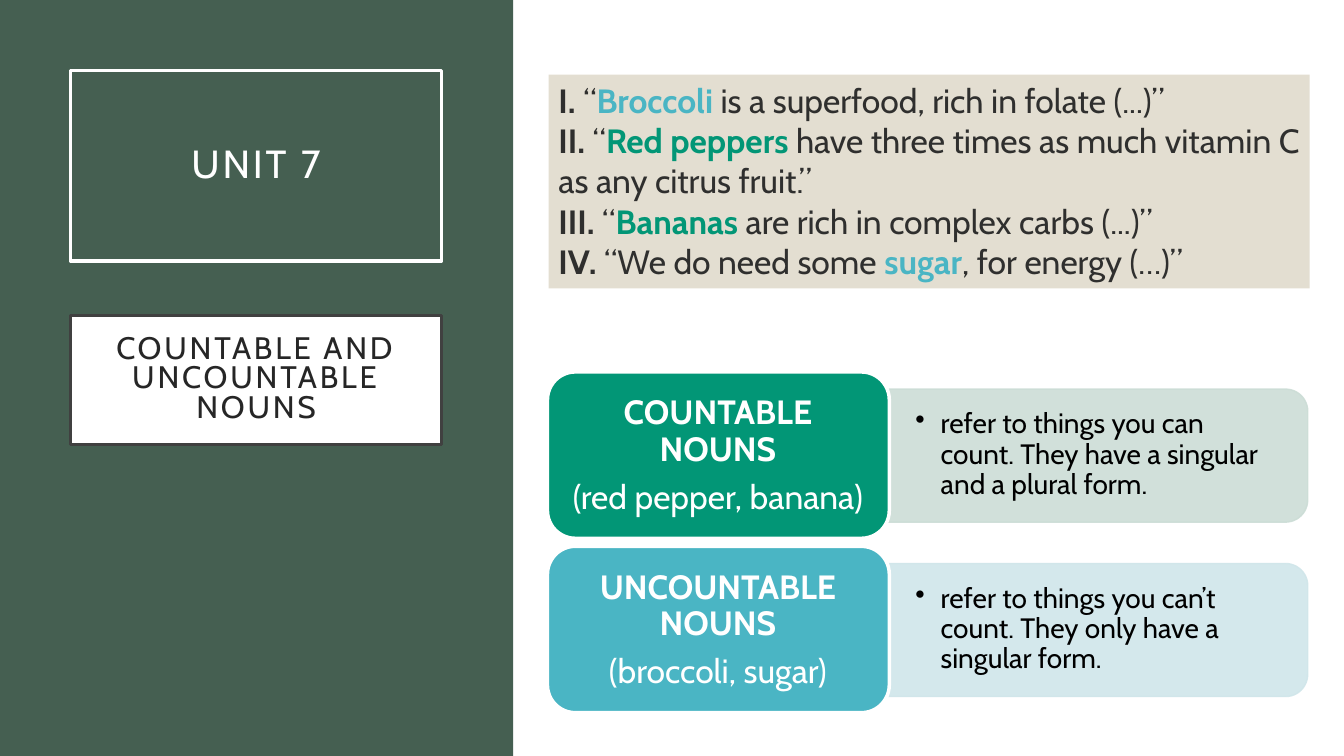
import pptx
import pptx.dml.color
import pptx.enum.shapes
import pptx.enum.text
import pptx.oxml.ns
import pptx.util
import lxml.etree

PX = 9144  # 100 px to the inch
WHITE, INK = "FFFFFF", "2F2F2E"
GREEN, BLUE = "029676", "4AB5C4"

rgb = pptx.dml.color.RGBColor.from_string
qn = pptx.oxml.ns.qn
SHAPE = pptx.enum.shapes.MSO_SHAPE
ALIGN = pptx.enum.text.PP_ALIGN
ANCHOR = pptx.enum.text.MSO_ANCHOR

deck = pptx.Presentation()
deck.slide_width, deck.slide_height = 1333 * PX, 750 * PX
slide = deck.slides.add_slide(deck.slide_layouts[6])


def block(preset, frame, fill=None, line=None, weight=2.5):
    shape = slide.shapes.add_shape(preset, *[n * PX for n in frame])
    shape.shadow.inherit = False
    if fill:
        shape.fill.solid()
        shape.fill.fore_color.rgb = rgb(fill)
    else:
        shape.fill.background()
    if line:
        shape.line.color.rgb = rgb(line)
        shape.line.width = pptx.util.Pt(weight)
    else:
        shape.line.fill.background()
    return shape


def write(shape, paragraphs, size, align=ALIGN.CENTER, anchor=ANCHOR.MIDDLE,
          inset=(10, 5), leading=1.0, after=0, tracking=0, bullet=False):
    """Each paragraph is a list of (text, colour, bold) runs."""
    frame = shape.text_frame
    frame.word_wrap = True
    frame.vertical_anchor = anchor
    frame.margin_left = frame.margin_right = inset[0] * PX
    frame.margin_top = frame.margin_bottom = inset[1] * PX
    for number, runs in enumerate(paragraphs):
        paragraph = frame.add_paragraph() if number else frame.paragraphs[0]
        paragraph.alignment = align
        paragraph.line_spacing = leading
        paragraph.space_after = pptx.util.Pt(after)
        if bullet:
            properties = paragraph._p.get_or_add_pPr()
            properties.set("marL", str(25 * PX))
            properties.set("indent", str(-25 * PX))
            lxml.etree.SubElement(properties, qn("a:buChar")).set("char", "•")
        for text, colour, bold in runs:
            run = paragraph.add_run()
            run.text = text
            run.font.name = "Cabin"
            run.font.size = pptx.util.Pt(size)
            run.font.bold = bold
            run.font.color.rgb = rgb(colour)
            if tracking:
                run._r.get_or_add_rPr().set("spc", str(tracking * 100))


# Side panel with unit and topic
block(SHAPE.RECTANGLE, (0, 0, 509, 750), "455F51")
unit = block(SHAPE.RECTANGLE, (70, 70, 368, 189), line=WHITE)
write(unit, [[("UNIT 7", WHITE, False)]], 28,
      inset=(20, 20), leading=0.9, tracking=2)
topic = block(SHAPE.RECTANGLE, (70, 313, 368, 128), WHITE, "404040")
write(topic, [[("COUNTABLE AND UNCOUNTABLE NOUNS", "262626", False)]], 22.2,
      inset=(20, 20), leading=0.8, tracking=2)

# Example sentences: numeral, opening, noun, noun colour, ending
sentences = [
    ("I. ", "“", "Broccoli", BLUE, " is a superfood, rich in folate (...)”"),
    ("II. ", "“", "Red peppers ", GREEN,
     "have three times as much vitamin C as any citrus fruit.”"),
    ("III. ", "“", "Bananas", GREEN, " are rich in complex carbs (...)”"),
    ("IV. ", "“We do need some ", "sugar", BLUE, ", for energy (…)”"),
]
examples = block(SHAPE.RECTANGLE, (544, 74, 755, 212), "E3DED1")
write(examples,
      [[(numeral, INK, True), (opening, INK, False),
        (noun, colour, True), (ending, INK, False)]
       for numeral, opening, noun, colour, ending in sentences],
      24, align=ALIGN.LEFT, anchor=ANCHOR.TOP)
examples.text_frame.auto_size = pptx.enum.text.MSO_AUTO_SIZE.SHAPE_TO_FIT_TEXT

# Noun kinds: a label and its definition per row
kinds = [
    ("COUNTABLE NOUNS", "(red pepper, banana)", GREEN, "CCDDD6",
     "refer to things you can count. They have a singular and a plural form."),
    ("UNCOUNTABLE NOUNS", "(broccoli, sugar)", BLUE, "D0E6EA",
     "refer to things you can’t count. They only have a singular form."),
]
for row, (kind, nouns, colour, tint, meaning) in enumerate(kinds):
    top = 369 + 173 * row

    # Definition band, turned so that its round corners face right
    band = block(SHAPE.ROUND_2_SAME_RECTANGLE, (1023, top - 125, 132, 416),
                 tint, tint, 1)
    band.rotation = 90
    for tone in band._element.spPr.iter(qn("a:srgbClr")):
        lxml.etree.SubElement(tone, qn("a:alpha")).set("val", "90000")
    definition = slide.shapes.add_textbox(
        881 * PX, (top + 23) * PX, 410 * PX, 119 * PX)
    write(definition, [[(meaning, "000000", False)]], 20, align=ALIGN.LEFT,
          inset=(27, 14), leading=0.9, after=3, bullet=True)

    # Label
    block(SHAPE.ROUNDED_RECTANGLE, (543, top, 339, 165), colour, WHITE)
    label = slide.shapes.add_textbox(
        551 * PX, (top + 9) * PX, 322 * PX, 149 * PX)
    write(label, [[(kind, WHITE, True)], [(nouns, WHITE, False)]], 24,
          leading=0.9, after=8.4)

deck.save("out.pptx")
